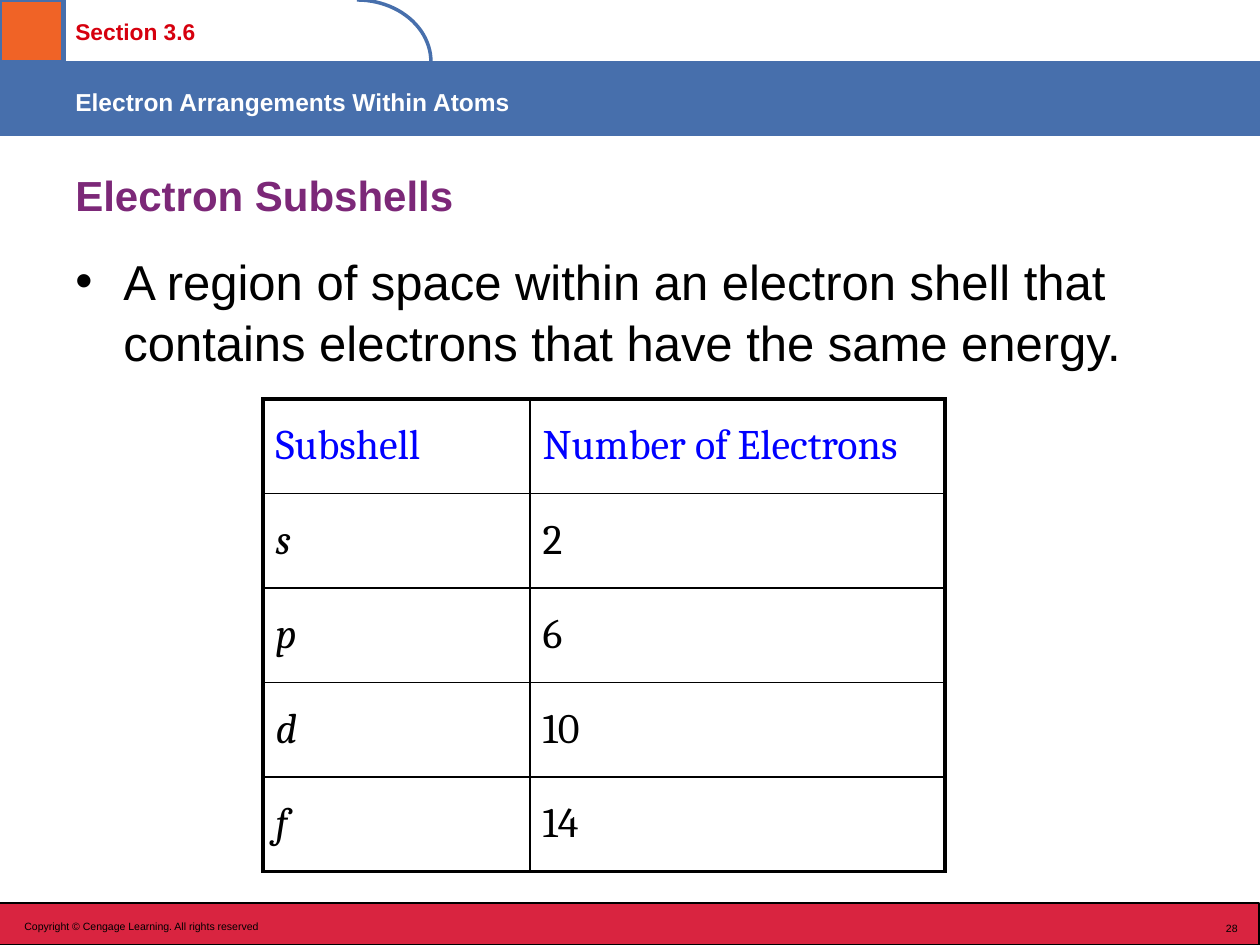
import math

from lxml import etree
from pptx import Presentation
from pptx.dml.color import RGBColor
from pptx.enum.shapes import MSO_SHAPE
from pptx.enum.text import MSO_ANCHOR, PP_ALIGN
from pptx.oxml.ns import qn
from pptx.util import Emu, Pt

RECTANGLE = MSO_SHAPE.RECTANGLE
TOP, MIDDLE = MSO_ANCHOR.TOP, MSO_ANCHOR.MIDDLE
LEFT, RIGHT = PP_ALIGN.LEFT, PP_ALIGN.RIGHT
EMU_PER_PX = 914400 / 126
COLORS = {
    "black": "000000", "white": "FFFFFF", "banner": "476FAC", "footer": "D92440",
    "green": "48A459", "orange": "F06326", "section": "D6000E",
    "title": "7C2878", "header": "0000FF",
}

# left, top, width, height, fill, line, line width in points
BLOCKS = [
    (-1, 903, 1260, 42, "footer", "black", 0.75),
    (0, 62, 1260, 73, "banner", "banner", 0.75),
    (1, 0, 63, 63, "green", "banner", 2),
    (0, 0, 63, 62, "orange", "banner", 2),
]
# text, box, size, colour, bold, alignment, anchor, top inset
TEXTS = [
    ("Section 3.6", (63, 4, 359, 59), 13, "section", True, LEFT, TOP, 14),
    ("Electron Arrangements Within Atoms", (63, 73, 1197, 63), 14, "white", True, LEFT, TOP, 14),
    ("Copyright © Cengage Learning. All rights reserved", (12, 912, 809, 31),
     6, "black", False, LEFT, TOP, 8),
    ("28", (914, 913, 336, 31), 6, "black", False, RIGHT, TOP, 9),
    ("Electron Subshells", (63, 158, 1134, 73), 24, "title", True, LEFT, MIDDLE, 6),
]
DEFINITION = ("A region of space within an electron shell that contains electrons "
              "that have the same energy.")
DEFINITION_BOX = (63, 242, 1134, 130)
BULLET_INDENT = 48
TAB_ARC = (357, 0, 74, 62)
ARC_STEPS = 24

SUBSHELLS = [("Subshell", "Number of Electrons"),
             ("s", "2"), ("p", "6"), ("d", "10"), ("f", "14")]
TABLE_LEFT, TABLE_TOP = 263, 399
COLUMN_WIDTHS = (267, 415)
ROW_HEIGHT = 94.5
OUTER_LINE, INNER_LINE = 2.25, 1


def px(value):
    return Emu(round(value * EMU_PER_PX))


def color(name):
    return RGBColor.from_string(COLORS[name])


def style_font(font, name, size, color_name, bold=False, italic=False):
    font.name, font.size, font.bold, font.italic = name, Pt(size), bold, italic
    font.color.rgb = color(color_name)


def add_block(slide, left, top, width, height, fill, line, line_width):
    shape = slide.shapes.add_shape(RECTANGLE, px(left), px(top), px(width), px(height))
    shape.shadow.inherit = False
    shape.fill.solid()
    shape.fill.fore_color.rgb = color(fill)
    shape.line.color.rgb = color(line)
    shape.line.width = Pt(line_width)


def add_tab_arc(slide):
    """Draw the quarter ellipse that ends the section tab."""
    left, top, width, height = TAB_ARC
    angles = [math.pi / 2 * step / ARC_STEPS for step in range(ARC_STEPS + 1)]
    points = [(left + width * math.sin(angle), top + height * (1 - math.cos(angle)))
              for angle in angles]
    builder = slide.shapes.build_freeform(px(left), px(top))
    builder.add_line_segments([(px(x), px(y)) for x, y in points[1:]], close=False)
    arc = builder.convert_to_shape()
    arc.shadow.inherit = False
    arc.fill.background()
    arc.line.color.rgb = color("banner")
    arc.line.width = Pt(2)


def add_text_frame(slide, box):
    text_frame = slide.shapes.add_textbox(*map(px, box)).text_frame
    text_frame.word_wrap = True
    return text_frame


def add_text(slide, text, box, size, color_name, bold, alignment, anchor, inset):
    text_frame = add_text_frame(slide, box)
    text_frame.vertical_anchor = anchor
    text_frame.margin_top = px(inset)
    paragraph = text_frame.paragraphs[0]
    paragraph.text = text
    paragraph.alignment = alignment
    style_font(paragraph.runs[0].font, "Arial", size, color_name, bold)


def add_definition(slide):
    paragraph = add_text_frame(slide, DEFINITION_BOX).paragraphs[0]
    paragraph.text = DEFINITION
    paragraph.line_spacing = 1.05
    properties = paragraph._p.get_or_add_pPr()
    properties.set("marL", str(px(BULLET_INDENT)))
    properties.set("indent", str(px(-BULLET_INDENT)))
    etree.SubElement(properties, qn("a:buFont")).set("typeface", "Arial")
    etree.SubElement(properties, qn("a:buChar")).set("char", "•")
    style_font(paragraph.runs[0].font, "Arial", 28, "black")


def set_borders(cell, widths):
    properties = cell._tc.get_or_add_tcPr()
    for side, width in widths.items():
        line = etree.SubElement(properties, qn(f"a:ln{side}"))
        line.set("w", str(Pt(width)))
        fill = etree.SubElement(line, qn("a:solidFill"))
        etree.SubElement(fill, qn("a:srgbClr")).set("val", COLORS["black"])


def add_subshell_table(slide):
    row_count, column_count = len(SUBSHELLS), len(COLUMN_WIDTHS)
    table = slide.shapes.add_table(
        row_count, column_count, px(TABLE_LEFT), px(TABLE_TOP),
        px(sum(COLUMN_WIDTHS)), px(ROW_HEIGHT * row_count)).table
    table.first_row = table.horz_banding = False
    for column, width in zip(table.columns, COLUMN_WIDTHS):
        column.width = px(width)
    for row_index, values in enumerate(SUBSHELLS):
        table.rows[row_index].height = px(ROW_HEIGHT)
        is_header = row_index == 0
        for column_index, value in enumerate(values):
            cell = table.cell(row_index, column_index)
            on_edge = {
                "L": column_index == 0, "R": column_index == column_count - 1,
                "T": is_header, "B": row_index == row_count - 1,
            }
            set_borders(cell, {side: OUTER_LINE if edge else INNER_LINE
                               for side, edge in on_edge.items()})
            cell.fill.background()
            cell.vertical_anchor = MIDDLE
            cell.text_frame.text = value
            style_font(cell.text_frame.paragraphs[0].runs[0].font, "Cambria", 24,
                       "header" if is_header else "black",
                       italic=column_index == 0 and not is_header)


def main():
    presentation = Presentation()
    presentation.slide_width, presentation.slide_height = px(1260), px(945)
    slide = presentation.slides.add_slide(presentation.slide_layouts[6])
    for block in BLOCKS:
        add_block(slide, *block)
    add_tab_arc(slide)
    for text in TEXTS:
        add_text(slide, *text)
    add_definition(slide)
    add_subshell_table(slide)
    presentation.save("out.pptx")


if __name__ == "__main__":
    main()
